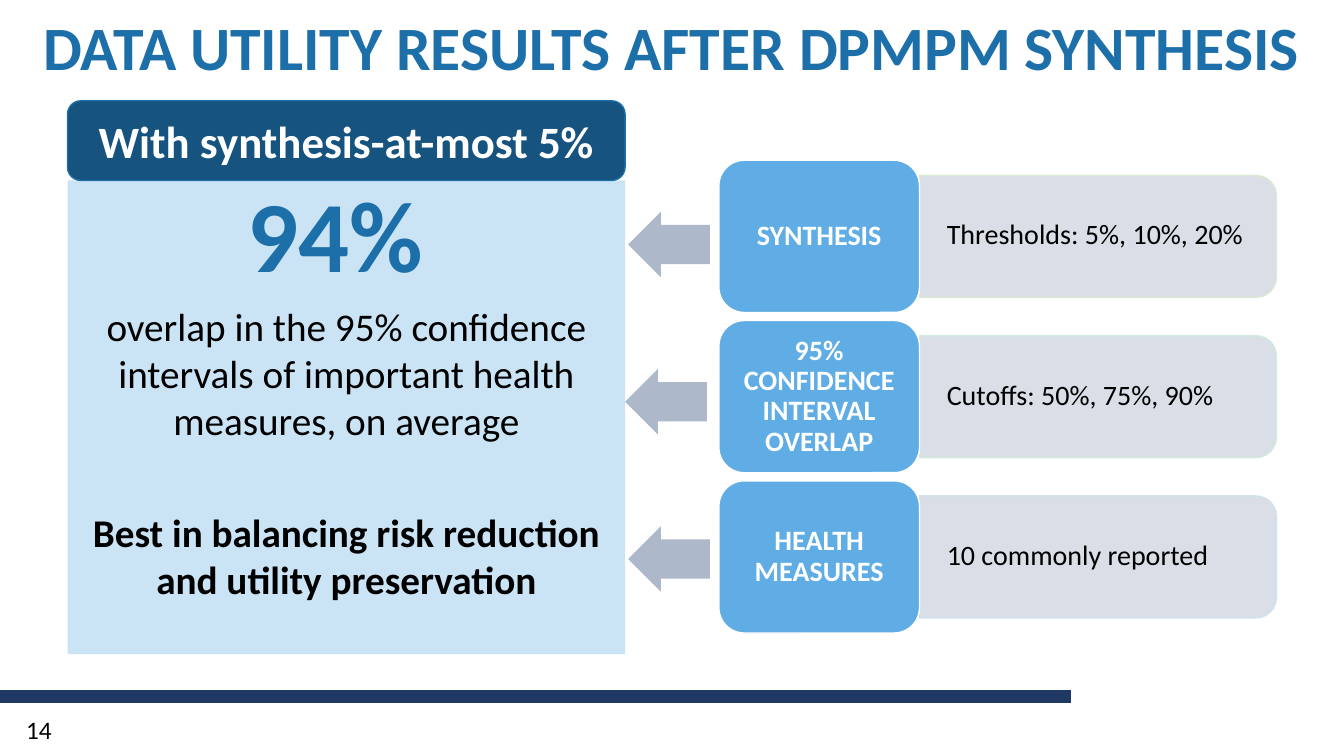
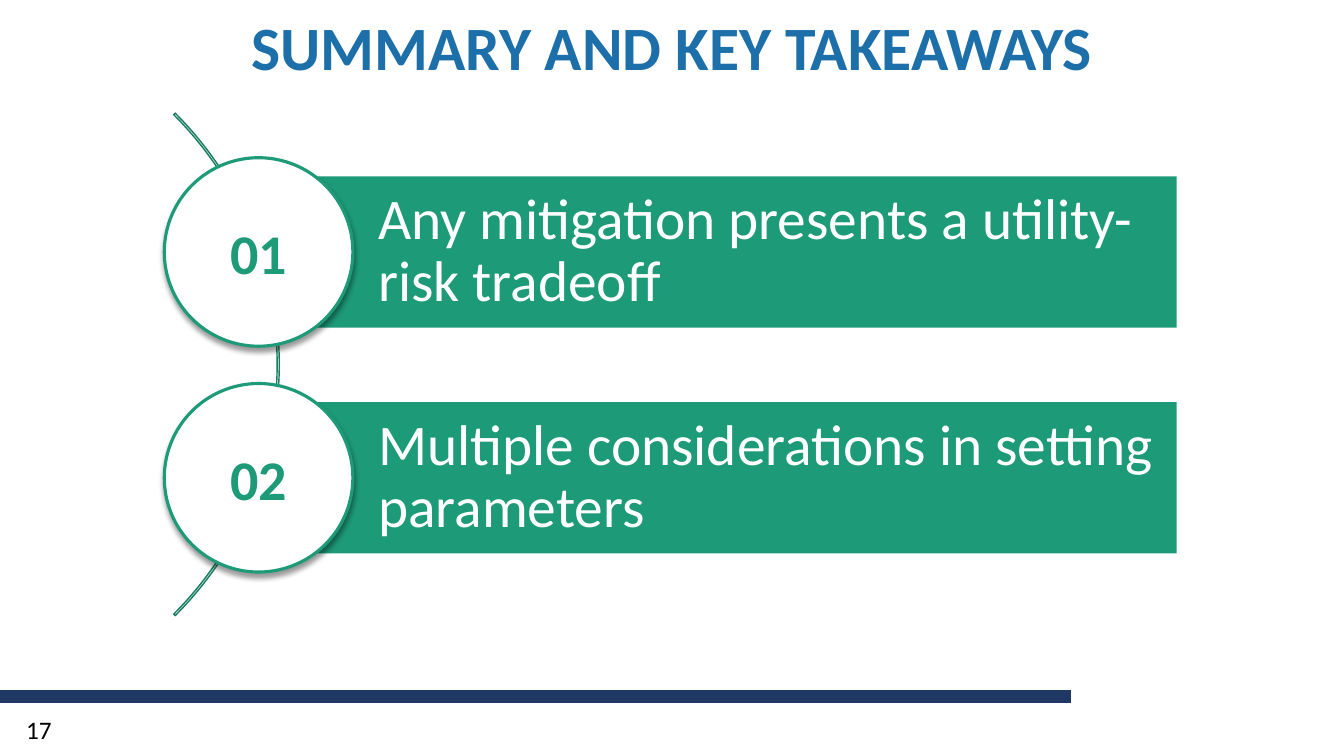
"""Build two slides on data utility results and key takeaways."""
from dataclasses import dataclass
from lxml.etree import SubElement as Sub
from pptx import Presentation
from pptx.dml.color import RGBColor as RGB
from pptx.enum.shapes import MSO_CONNECTOR as Link, MSO_SHAPE as Form
from pptx.enum.text import MSO_ANCHOR as Anchor, MSO_AUTO_SIZE as Fit, PP_ALIGN as Align
from pptx.oxml.ns import qn
from pptx.util import Inches, Pt

UTILITY = {
    "title": "DATA UTILITY RESULTS AFTER DPMPM SYNTHESIS",
    "page": "14",
    "head": "With synthesis-at-most 5%",
    "rate": "94% ",
    "claim": "overlap in the 95% confidence intervals of important health measures, on average",
    "verdict": "Best in balancing risk reduction and utility preservation",
    "rows": [
        ("SYNTHESIS", "Thresholds: 5%, 10%, 20%", "DAE9CF", 6.23),
        ("95% CONFIDENCE INTERVAL OVERLAP", "Cutoffs: 50%, 75%, 90%", "CEEBDB", 6.2),
        ("HEALTH MEASURES", "10 commonly reported", "CEE3ED", 6.23),
    ],
}
SUMMARY = {
    "title": "SUMMARY AND KEY TAKEAWAYS",
    "page": "17",
    "points": [
        ("01", "Any mitigation presents a utility-risk tradeoff"),
        ("02", "Multiple considerations in setting parameters"),
    ],
}


@dataclass(frozen=True)
class Theme:
    """Colours, font and type sizes of the deck."""
    font: str = "Calibri"
    white: str = "FFFFFF"
    black: str = "000000"
    blue: str = "1D6FA9"
    deep: str = "16537F"
    pale: str = "CAE4F6"
    sky: str = "5FADE4"
    grey: str = "D6DCE5"
    steel: str = "ADB9CA"
    navy: str = "1F3864"
    green: str = "1D9A78"
    pine: str = "177B60"
    title: int = 44
    rate: int = 72
    head: int = 32
    body: int = 28
    label: int = 20
    page: int = 18
    point: int = 41
    badge: int = 40


T = Theme()


def style(para, size, color, bold=False, align=Align.CENTER, lead=1.0):
    """Format a paragraph and its runs."""
    para.alignment, para.line_spacing = align, lead
    for run in para.runs:
        font = run.font
        font.name, font.size, font.bold = T.font, Pt(size), bold
        font.color.rgb = RGB.from_string(color)


def write(shape, text, size, color, pad=(0.1, 0.05, 0.1, 0.05), **look):
    """Put one vertically centred paragraph in a shape."""
    frame = shape.text_frame
    frame.word_wrap, frame.auto_size = True, Fit.NONE
    frame.vertical_anchor = Anchor.MIDDLE
    (frame.margin_left, frame.margin_top,
     frame.margin_right, frame.margin_bottom) = map(Inches, pad)
    frame.text = text
    style(frame.paragraphs[0], size, color, **look)


def draw(slide, form, box, fill=None, line=None, width=1):
    """Add a flat preset shape."""
    shape = slide.shapes.add_shape(form, *map(Inches, box))
    shape.shadow.inherit = False
    if fill:
        shape.fill.solid()
        shape.fill.fore_color.rgb = RGB.from_string(fill)
    else:
        shape.fill.background()
    if line:
        shape.line.color.rgb = RGB.from_string(line)
        shape.line.width = Pt(width)
    else:
        shape.line.fill.background()
    return shape


def label(slide, box, *args, **look):
    """Add a text box."""
    write(slide.shapes.add_textbox(*map(Inches, box)), *args, **look)


def fade(shape, share):
    """Set the opacity of a shape's fill and line."""
    for color in shape._element.spPr.iter(qn("a:srgbClr")):
        Sub(color, qn("a:alpha"), val=str(share * 1000))


def shade(shape):
    """Give a shape a soft shadow below it."""
    effects = shape._element.spPr.find(qn("a:effectLst"))
    outer = Sub(effects, qn("a:outerShdw"), blurRad=str(Pt(4)), dist=str(Pt(3)),
                dir="5400000", algn="t", rotWithShape="0")
    color = Sub(outer, qn("a:srgbClr"), val=T.black)
    Sub(color, qn("a:alpha"), val="40000")


def start(deck, data):
    """Add a slide with its title, bottom rule and page number."""
    slide = deck.slides.add_slide(deck.slide_layouts[5])
    rule = slide.shapes.add_connector(
        Link.STRAIGHT, Inches(10.62), Inches(6.91), Inches(0), Inches(6.91))
    rule.line.color.rgb = RGB.from_string(T.navy)
    rule.line.width = Pt(9.75)
    Sub(rule._element.spPr, qn("a:effectLst"))
    title = slide.shapes.title
    title.left, title.top, title.width, title.height = map(Inches, (0, 0, 13.33, 1))
    write(title, data["title"], T.title, T.blue, bold=True, lead=0.9)
    label(slide, (0.16, 7.04, 0.52, 0.4), data["page"], T.page, T.black, align=Align.LEFT)
    return slide


def panel(slide, data):
    """Draw the result panel with its heading."""
    left, top, wide, high = 0.67, 1, 5.53, 0.79
    body = draw(slide, Form.RECTANGLE, (left, top + high, wide, 4.7), T.pale)
    frame = body.text_frame
    frame.word_wrap, frame.vertical_anchor = True, Anchor.TOP
    frame.text = "\n".join(data[key] for key in ("rate", "claim", "verdict"))
    rate, claim, verdict = frame.paragraphs
    style(rate, T.rate, T.blue, bold=True, lead=0.9)
    style(claim, T.body, T.black)
    style(verdict, T.body, T.black, bold=True)
    rate.space_after, verdict.space_before = Pt(6), Pt(46)
    head = draw(slide, Form.ROUNDED_RECTANGLE, (left, top, wide, high), T.deep, T.blue)
    write(head, data["head"], T.head, T.white, bold=True)


def utility(deck, data):
    """Build the results slide."""
    slide = start(deck, data)
    panel(slide, data)
    left, top, wide, high, step = 7.13, 1.59, 1.99, 1.51, 1.59
    long, thick = 3.54, 1.21
    edge = left + wide
    for i, (name, note, line, tip) in enumerate(data["rows"]):
        y = top + i * step
        mid = y + high / 2
        box = (edge + (long - thick) / 2, mid - long / 2, thick, long)
        card = draw(slide, Form.ROUND_2_SAME_RECTANGLE, box, T.grey, line)
        card.rotation = 90
        fade(card, 90)
        label(slide, (edge, mid - 0.55, 3.48, 1.09), note, T.label, T.black,
              pad=(0.27, 0.14, 0.27, 0.14), align=Align.LEFT, lead=0.9)
        tile = draw(slide, Form.ROUNDED_RECTANGLE, (left, y, wide, high), T.sky, T.white)
        write(tile, name, T.label, T.white, pad=(0.15, 0.11, 0.15, 0.11), bold=True, lead=0.9)
        arrow = draw(slide, Form.LEFT_ARROW, (tip, 2.1 + i * 1.56, 0.81, 0.65), T.steel)
        arrow.adjustments[0], arrow.adjustments[1] = 0.6, 0.5


def summary(deck, data):
    """Build the takeaways slide."""
    slide = start(deck, data)
    arc = draw(slide, Form.BLOCK_ARC, (-4.28, 0.09, 7.05, 7.05), line=T.pine)
    for i, value in enumerate((189, 27, 0.003)):
        arc.adjustments[i] = value
    high, size, step = 1.5, 1.87, 2.24
    for i, (mark, text) in enumerate(data["points"]):
        y = 1.75 + i * step
        bar = draw(slide, Form.RECTANGLE, (2.56, y, 9.11, high), T.green)
        write(bar, text, T.point, T.white, pad=(1.19, 0.11, 0.11, 0.11),
              align=Align.LEFT, lead=0.9)
        box = (1.63, y + (high - size) / 2, size, size)
        badge = draw(slide, Form.OVAL, box, T.white, T.green, 2.25)
        shade(badge)
        write(badge, mark, T.badge, T.green, pad=(0.13, 0.07, 0.13, 0.07), bold=True)


def main():
    """Build and save the deck."""
    deck = Presentation()
    deck.slide_width, deck.slide_height = Inches(13.33), Inches(7.5)
    utility(deck, UTILITY)
    summary(deck, SUMMARY)
    deck.save("out.pptx")


if __name__ == "__main__":
    main()
